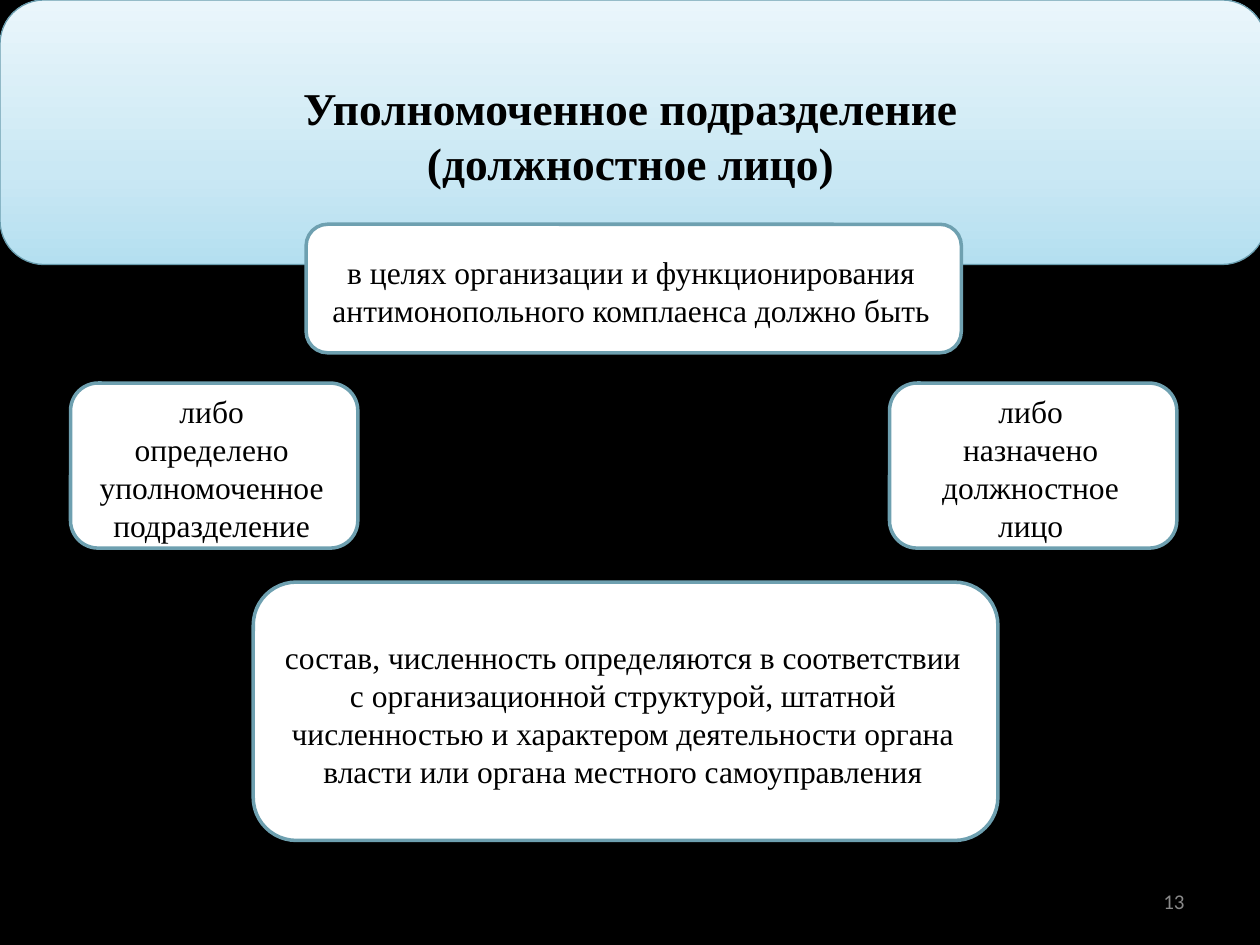
from copy import deepcopy

from pptx import Presentation
from pptx import util as u
from pptx.dml.color import RGBColor
from pptx.enum import shapes, text

COLORS = {
    "background": "000000",
    "ink": "000000",
    "card": "FFFFFF",
    "card_line": "6EA0B0",
    "banner_line": "6A9DAE",
    "banner_bottom": "B4DFF0",
    "banner_middle": "CAE8F4",
    "banner_top": "EAF6FB",
    "number": "898989",
}
SERIF = "Times New Roman"
COLUMNS, ROWS = 100, 75


def color(name):
    return RGBColor.from_string(COLORS[name])


def write(frame, lines, size=18, font=SERIF, ink="ink", bold=False,
          align=text.PP_ALIGN.CENTER, insets=(0.12, 0.12, 0.16, 0.08)):
    """Fill a text frame, one paragraph per line."""
    frame.word_wrap = True
    frame.vertical_anchor = text.MSO_ANCHOR.MIDDLE
    (frame.margin_left, frame.margin_top,
     frame.margin_right, frame.margin_bottom) = map(u.Inches, insets)
    for index, line in enumerate(lines):
        para = frame.add_paragraph() if index else frame.paragraphs[0]
        para.alignment = align
        span = para.add_run()
        span.text = line
        span.font.size = u.Pt(size)
        span.font.name = font
        span.font.bold = bold
        span.font.color.rgb = color(ink)


class Slide:
    """The page, its grid and its house style."""

    def __init__(self, deck):
        self.column = deck.slide_width / COLUMNS
        self.row = deck.slide_height / ROWS
        self.page = deck.slides.add_slide(deck.slide_layouts[6])
        fill = self.page.background.fill
        fill.solid()
        fill.fore_color.rgb = color("background")

    def place(self, left, top, width, height):
        return (round(left * self.column), round(top * self.row),
                round(width * self.column), round(height * self.row))

    def rounded(self, area, line, weight):
        box = self.page.shapes.add_shape(
            shapes.MSO_SHAPE.ROUNDED_RECTANGLE, *self.place(*area))
        box.shadow.inherit = False
        box.line.color.rgb = color(line)
        box.line.width = u.Pt(weight)
        return box

    def banner(self, area, lines):
        box = self.rounded(area, "banner_line", 0.75)
        box.fill.gradient()
        box.fill.gradient_angle = 90
        # The default gradient has two stops; a third goes between them
        stop_list = box.element.xpath(".//a:gsLst")[0]
        stop_list.insert(1, deepcopy(stop_list[0]))
        stops = ((0, "banner_bottom"), (0.35, "banner_middle"), (1, "banner_top"))
        for stop, (position, name) in zip(box.fill.gradient_stops, stops):
            stop.position = position
            stop.color.rgb = color(name)
        write(box.text_frame, lines, size=26, bold=True)

    def card(self, area, lines):
        box = self.rounded(area, "card_line", 2)
        box.fill.solid()
        box.fill.fore_color.rgb = color("card")
        write(box.text_frame, lines)

    def number(self, area, value):
        box = self.page.shapes.add_textbox(*self.place(*area))
        write(box.text_frame, [value], size=12, font="Calibri", ink="number",
              align=text.PP_ALIGN.RIGHT, insets=(0.1, 0.05, 0.1, 0.05))


def main():
    deck = Presentation()
    deck.slide_width, deck.slide_height = u.Inches(10), u.Inches(7.5)
    slide = Slide(deck)

    # Page number and title banner
    slide.number((71.7, 69.5, 23.3, 4), "13")
    slide.banner((0, 0, 100.5, 21),
                 ["Уполномоченное подразделение", "(должностное лицо)"])

    # Purpose at the top, staffing rule at the bottom
    slide.card((24.3, 17.8, 52, 10.2),
               ["в целях организации и функционирования "
                "антимонопольного комплаенса должно быть"])
    slide.card((20.1, 46.2, 59.1, 20.5),
               ["состав, численность определяются в соответствии "
                "с организационной структурой, штатной численностью "
                "и характером деятельности органа власти "
                "или органа местного самоуправления"])

    # The two alternatives, side by side
    alternatives = (
        (5.6, ["либо", "определено", "уполномоченное подразделение"]),
        (70.6, ["либо", "назначено должностное лицо"]),
    )
    for left, lines in alternatives:
        slide.card((left, 30.4, 22.8, 13.1), lines)

    deck.save("out.pptx")


if __name__ == "__main__":
    main()
